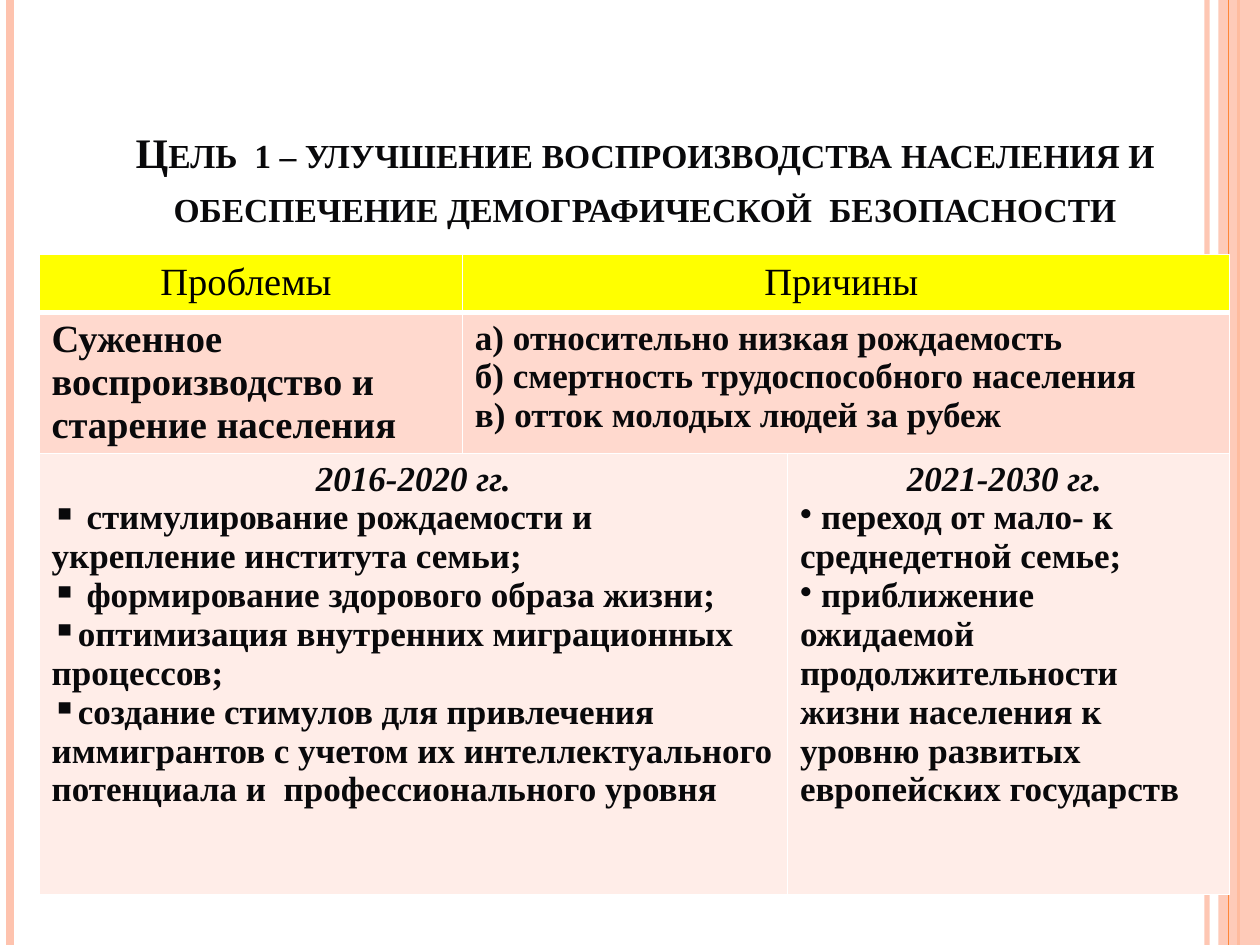
"""Build the slide on population renewal and demographic safety."""
from typing import NamedTuple

from lxml import etree
from pptx import Presentation, util as u
from pptx.dml.color import RGBColor
from pptx.enum import shapes, text
from pptx.oxml.ns import qn

FONT = "Times New Roman"
HUES = {"ink": "09090B", "black": "000000", "white": "FFFFFF", "peach": "FEC3AE",
        "orange": "FE8637", "head": "FFFF00", "rose": "FFD9CE", "pale": "FFEDE8"}


class Stripe(NamedTuple):
    x: float
    hue: str
    width: float
    alpha: int = 100


class Box(NamedTuple):
    row: int
    col: int
    span: int
    fill: str
    size: int
    lines: list[str]
    head: bool = False
    mark: str = ""


STRIPES = [Stripe(9.58, "peach", 3, 93), Stripe(0.08, "peach", 4.5),
           Stripe(9.83, "orange", 1.5)]
EDGE = Stripe(9.75, "orange", 0.75)
COLS = [3.36, 2.58, 3.51]
ROWS = [0.46, 1.12, 3.5]
BOXES = [
    Box(0, 0, 1, "head", 22, ["Проблемы "], True),
    Box(0, 1, 2, "head", 22, ["Причины "], True),
    Box(1, 0, 1, "rose", 22, ["Суженное воспроизводство и старение населения"]),
    Box(1, 1, 2, "rose", 20, ["а) относительно низкая рождаемость",
                              "б) смертность трудоспособного населения",
                              "в) отток молодых людей за рубеж"]),
    Box(2, 0, 2, "pale", 20, [
        "2016-2020 гг.",
        " стимулирование рождаемости и укрепление института семьи;",
        " формирование здорового образа жизни;",
        "оптимизация внутренних миграционных процессов;",
        "создание стимулов для привлечения иммигрантов с учетом их "
        "интеллектуального потенциала и  профессионального уровня"], mark="▪"),
    Box(2, 2, 1, "pale", 20, [
        "2021-2030 гг. ",
        " переход от мало- к среднедетной семье;",
        " приближение ожидаемой продолжительности жизни населения к уровню "
        "развитых европейских государств"], mark="•"),
]


def rgb(hue: str) -> RGBColor:
    """Return the named colour."""
    return RGBColor.from_string(HUES[hue])


def fade(part, alpha: int) -> None:
    """Make the first colour of a part partly clear."""
    tint = next(part._element.iter(qn("a:srgbClr")))
    etree.SubElement(tint, qn("a:alpha"), val=str(alpha * 1000))


def style(para, size: int, hue: str, bold: bool, slant: bool = False) -> None:
    """Format every run of a paragraph."""
    for run in para.runs:
        font = run.font
        font.name, font.size = FONT, u.Pt(size)
        font.bold, font.italic = bold, slant
        font.color.rgb = rgb(hue)


def draw_stripe(slide, stripe: Stripe) -> None:
    """Draw one line from top to bottom."""
    x = u.Inches(stripe.x)
    line = slide.shapes.add_connector(
        shapes.MSO_CONNECTOR.STRAIGHT, x, 0, x, u.Inches(7.5))
    line.line.color.rgb = rgb(stripe.hue)
    line.line.width = u.Pt(stripe.width)
    if stripe.alpha < 100:
        fade(line, stripe.alpha)
    etree.SubElement(line._element.spPr, qn("a:effectLst"))


def draw_band(slide) -> None:
    """Draw the broad band on the right."""
    band = slide.shapes.add_shape(shapes.MSO_SHAPE.RECTANGLE, u.Inches(9.67), 0,
                                  u.Inches(0.33), u.Inches(7.5))
    band.shadow.inherit = False
    band.fill.solid()
    band.fill.fore_color.rgb = rgb("peach")
    band.line.fill.background()
    fade(band, 87)


def draw_title(slide) -> None:
    """Fill and place the title."""
    title = slide.shapes.title
    title.left, title.top = u.Inches(0.62), u.Inches(0.21)
    title.width, title.height = u.Inches(9), u.Inches(1.67)
    frame = title.text_frame
    frame.text = ("Цель  1 – улучшение воспроизводства населения и "
                  "обеспечение демографической  безопасности")
    frame.word_wrap = True
    frame.auto_size = text.MSO_AUTO_SIZE.NONE
    frame.vertical_anchor = text.MSO_ANCHOR.BOTTOM
    para = frame.paragraphs[0]
    para.alignment = text.PP_ALIGN.CENTER
    para.line_spacing = 1.07
    style(para, 24, "ink", True)
    para.runs[0]._r.get_or_add_rPr().set("cap", "small")


def edge_cell(cell, row: int) -> None:
    """Give a cell white borders, thicker under the header."""
    props = cell._tc.get_or_add_tcPr()
    for spot, side in enumerate(("L", "R", "T", "B")):
        thick = (side, row) in (("B", 0), ("T", 1))
        line = etree.Element(qn(f"a:ln{side}"), w=str(u.Pt(3 if thick else 1)))
        fill = etree.SubElement(line, qn("a:solidFill"))
        etree.SubElement(fill, qn("a:srgbClr"), val=HUES["white"])
        props.insert(spot, line)


def fill_box(table, box: Box) -> None:
    """Merge, colour and write one cell."""
    cell = table.cell(box.row, box.col)
    if box.span > 1:
        cell.merge(table.cell(box.row, box.col + box.span - 1))
    cell.fill.solid()
    cell.fill.fore_color.rgb = rgb(box.fill)
    cell.text_frame.text = "\n".join(box.lines)
    for spot, para in enumerate(cell.text_frame.paragraphs):
        date = bool(box.mark) and spot == 0
        style(para, box.size, "black" if box.head else "ink", not box.head, date)
        if box.head or date:
            para.alignment = text.PP_ALIGN.CENTER
        elif box.mark:
            etree.SubElement(para._p.get_or_add_pPr(), qn("a:buChar"), char=box.mark)


def draw_table(slide) -> None:
    """Draw the table of problems, causes and plans."""
    frame = slide.shapes.add_table(len(ROWS), len(COLS), u.Inches(0.31), u.Inches(2.02),
                                   u.Inches(sum(COLS)), u.Inches(sum(ROWS)))
    table = frame.table
    table.first_row = table.horz_banding = False
    for col, width in zip(table.columns, COLS):
        col.width = u.Inches(width)
    for row, height in zip(table.rows, ROWS):
        row.height = u.Inches(height)
    for box in BOXES:
        fill_box(table, box)
    for row in range(len(ROWS)):
        for col in range(len(COLS)):
            edge_cell(table.cell(row, col), row)


def main() -> None:
    """Build and save the slide."""
    deck = Presentation()
    deck.slide_width, deck.slide_height = u.Inches(10), u.Inches(7.5)
    slide = deck.slides.add_slide(deck.slide_layouts[5])
    for stripe in STRIPES:
        draw_stripe(slide, stripe)
    draw_band(slide)
    draw_stripe(slide, EDGE)
    draw_title(slide)
    draw_table(slide)
    deck.save("out.pptx")


if __name__ == "__main__":
    main()
